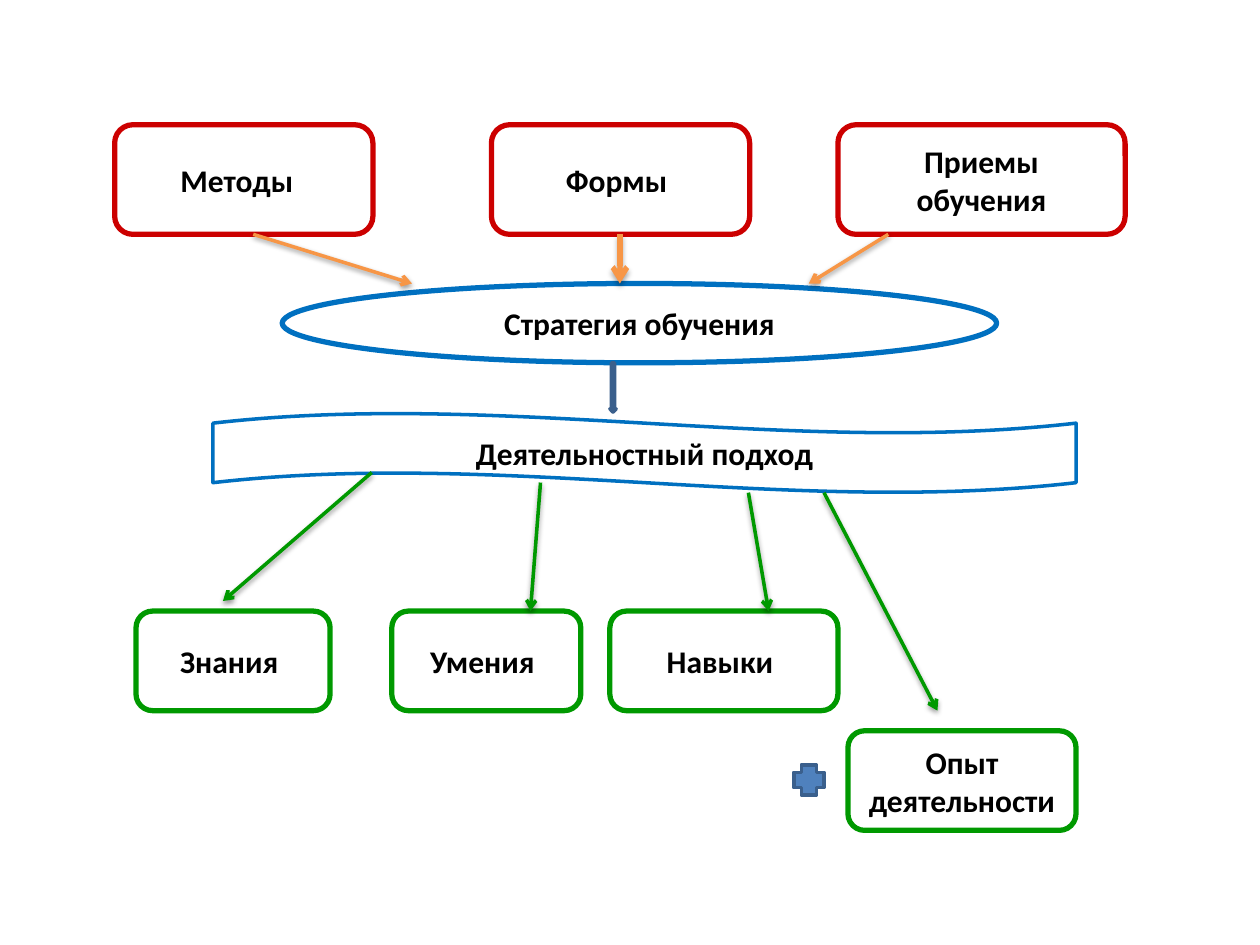
from lxml.etree import SubElement
from pptx import Presentation
from pptx.dml.color import RGBColor
from pptx.enum.shapes import MSO_CONNECTOR, MSO_SHAPE
from pptx.enum.text import MSO_ANCHOR, PP_ALIGN
from pptx.oxml.ns import qn
from pptx.util import Inches, Pt

RED, BLUE, GREEN, ORANGE = "CC0000", "0070C0", "009900", "F79646"
FILL, EDGE = "4F81BD", "3A5F8C"
TOP, LOW = 0.99, 4.85


def paint(color, value):
    """Set a colour from a hex string."""
    color.rgb = RGBColor.from_string(value)


def add_form(slide, kind, area, edge, width, fill=None):
    """Add a preset shape with an outline and an optional fill."""
    form = slide.shapes.add_shape(kind, *map(Inches, area))
    form.shadow.inherit = False
    if fill:
        form.fill.solid()
        paint(form.fill.fore_color, fill)
    else:
        form.fill.background()
    paint(form.line.color, edge)
    form.line.width = Pt(width)
    return form


def add_label(slide, kind, area, edge, text, width=3, inset=0.1):
    """Add an outlined shape with centred bold text."""
    frame = add_form(slide, kind, area, edge, width).text_frame
    frame.word_wrap = True
    frame.vertical_anchor = MSO_ANCHOR.MIDDLE
    frame.margin_right = Inches(inset)
    frame.text = text
    para = frame.paragraphs[0]
    para.alignment = PP_ALIGN.CENTER
    font = para.runs[0].font
    font.name, font.size, font.bold = "Calibri", Pt(18), True
    paint(font.color, "000000")


def add_arrow(slide, start, end, color, width=2, alpha=38, dist=1.6):
    """Add a straight arrow with a soft shadow below it."""
    arrow = slide.shapes.add_connector(
        MSO_CONNECTOR.STRAIGHT, *map(Inches, (*start, *end)))
    paint(arrow.line.color, color)
    arrow.line.width = Pt(width)
    props = arrow._element.spPr
    SubElement(props.find(qn("a:ln")), qn("a:tailEnd"), type="arrow")
    effects = SubElement(props, qn("a:effectLst"))
    shade = SubElement(
        effects, qn("a:outerShdw"), blurRad=str(Pt(3.1)), dist=str(Pt(dist)),
        dir="5400000", rotWithShape="0")
    tint = SubElement(shade, qn("a:srgbClr"), val="000000")
    SubElement(tint, qn("a:alpha"), val=str(alpha * 1000))


def main():
    """Build the slide and save it."""
    deck = Presentation()
    deck.slide_width, deck.slide_height = Inches(10), Inches(7.5)
    slide = deck.slides.add_slide(deck.slide_layouts[6])

    for left, width, text, inset in (
            (0.91, 2.05, "Методы", 0.21),
            (3.9, 2.05, "Формы", 0.16),
            (6.65, 2.28, "Приемы обучения", 0.1)):
        add_label(slide, MSO_SHAPE.ROUNDED_RECTANGLE,
                  (left, TOP, width, 0.87), RED, text, inset=inset)

    add_label(slide, MSO_SHAPE.OVAL, (2.24, 2.25, 5.67, 0.63), BLUE,
              "Стратегия обучения")
    add_label(slide, MSO_SHAPE.WAVE, (1.69, 3.28, 6.85, 0.63), BLUE,
              "Деятельностный подход", width=2)

    for left, top, width, text, inset in (
            (1.08, LOW, 1.54, "Знания", 0.16),
            (3.11, LOW, 1.5, "Умения", 0.16),
            (4.84, LOW, 1.81, "Навыки", 0.16),
            (6.73, 5.8, 1.81, "Опыт деятельности", 0.1)):
        add_label(slide, MSO_SHAPE.ROUNDED_RECTANGLE,
                  (left, top, width, 0.79), GREEN, text, inset=inset)

    add_arrow(slide, (2.01, 1.86), (3.27, 2.25), ORANGE)
    add_arrow(slide, (4.92, 1.86), (4.92, 2.25), ORANGE, 3, 35, 1.8)
    add_arrow(slide, (7.05, 1.86), (6.42, 2.25), ORANGE)
    add_form(slide, MSO_SHAPE.DOWN_ARROW, (4.84, 2.88, 0.05, 0.39),
             EDGE, 2, FILL)

    for start, end in (
            ((2.95, 3.75), (1.77, 4.77)),
            ((4.29, 3.83), (4.21, LOW)),
            ((5.94, 3.91), (6.1, LOW)),
            ((6.54, 3.91), (7.44, 5.64))):
        add_arrow(slide, start, end, GREEN)
    add_form(slide, MSO_SHAPE.CROSS, (6.3, 6.07, 0.24, 0.24), EDGE, 2, FILL)

    deck.save("out.pptx")


if __name__ == "__main__":
    main()
